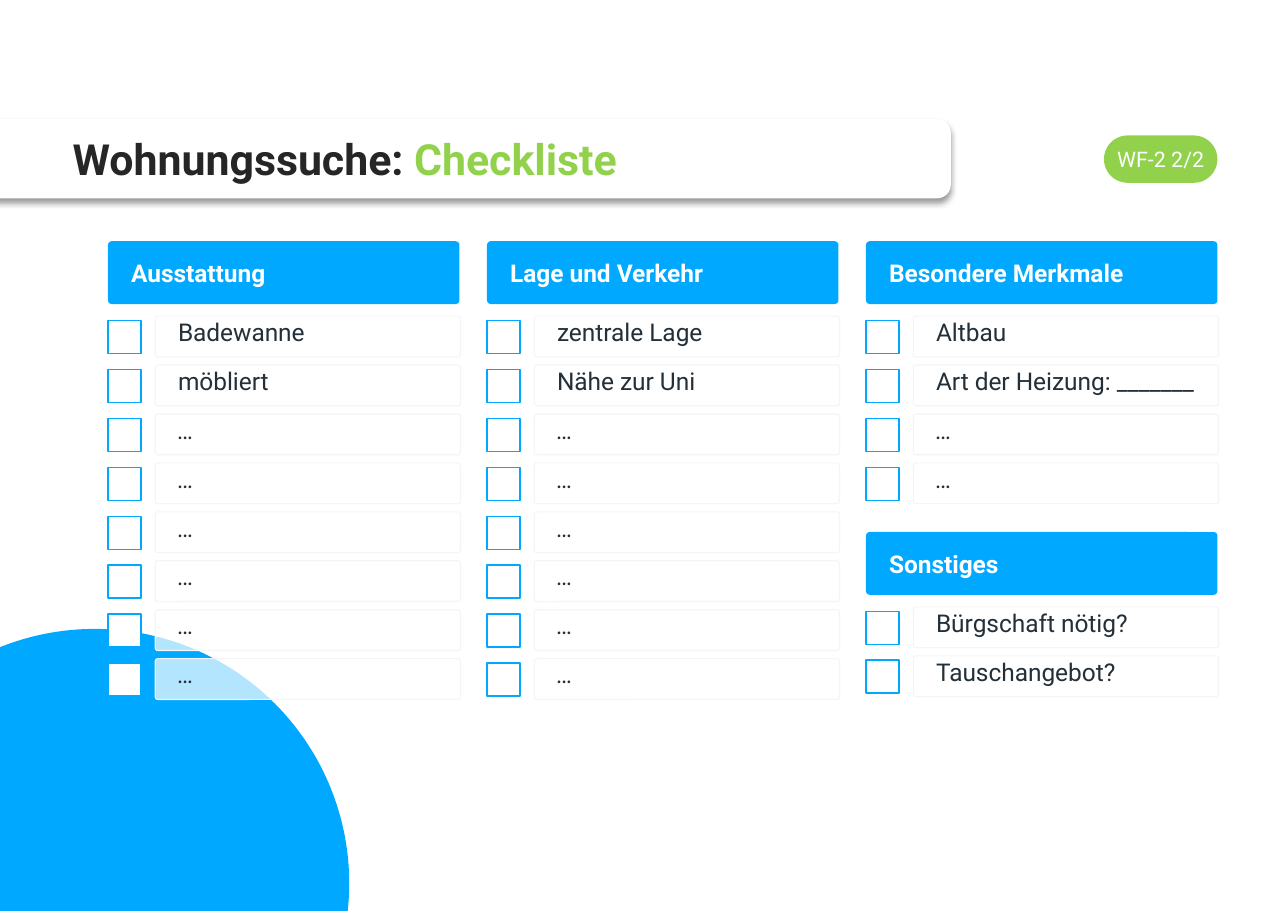
"""Build the flat-hunting checklist slide."""
from dataclasses import dataclass
from math import acos, asin, cos, pi, sin

from lxml import etree
from pptx import Presentation
from pptx.dml.color import RGBColor
from pptx.enum.shapes import MSO_SHAPE
from pptx.enum.text import MSO_ANCHOR, MSO_AUTO_SIZE, PP_ALIGN
from pptx.oxml.ns import qn
from pptx.shapes.autoshape import Shape
from pptx.slide import Slide
from pptx.util import Inches, Pt

RECT, ROUND = MSO_SHAPE.RECTANGLE, MSO_SHAPE.ROUNDED_RECTANGLE
TOP, MIDDLE = MSO_ANCHOR.TOP, MSO_ANCHOR.MIDDLE
LEFT, CENTER = PP_ALIGN.LEFT, PP_ALIGN.CENTER
BLUE = RGBColor(0x00, 0xA8, 0xFF)
GREEN = RGBColor(0x91, 0xD1, 0x4C)
WHITE = RGBColor(0xFF, 0xFF, 0xFF)
PALE = RGBColor(0xF5, 0xF5, 0xF5)
DARK = RGBColor(0x26, 0x26, 0x26)
SLATE = RGBColor(0x24, 0x30, 0x39)
BLACK = RGBColor(0x00, 0x00, 0x00)
FONT = "Roboto"
WIDE, HIGH = 11.69, 8.27
PITCH = (5.98 - 2.87) / 7
PAD = (0.2, 0, 0.12, 0)
DOTS = "…"


@dataclass(frozen=True)
class Group:
    """A headed list of things to tick."""
    left: float
    top: float
    head: str
    items: tuple[str, ...]
    blanks: int = 0


GROUPS = (
    Group(0.98, 2.19, "Ausstattung", ("Badewanne", "möbliert"), 6),
    Group(4.42, 2.19, "Lage und Verkehr", ("zentrale Lage", "Nähe zur Uni"), 6),
    Group(7.86, 2.19, "Besondere Merkmale", ("Altbau", "Art der Heizung: _______"), 2),
    Group(7.86, 4.83, "Sonstiges", ("Bürgschaft nötig?", "Tauschangebot?")),
)


def write(shape: Shape, *parts: tuple[str, RGBColor], size: float = 16,
          bold: bool = False, italic: bool = False, align: PP_ALIGN = LEFT,
          anchor: MSO_ANCHOR = MIDDLE,
          pad: tuple[float, float, float, float] = PAD) -> None:
    """Fill a shape with one paragraph of coloured runs."""
    frame = shape.text_frame
    frame.word_wrap = True
    frame.auto_size = MSO_AUTO_SIZE.NONE
    frame.vertical_anchor = anchor
    frame.margin_left, frame.margin_top, frame.margin_right, frame.margin_bottom = map(Inches, pad)
    para = frame.paragraphs[0]
    para.alignment = align
    for text, color in parts:
        run = para.add_run()
        run.text = text
        run.font.name = FONT
        run.font.size = Pt(size)
        run.font.bold = bold
        run.font.italic = italic
        run.font.color.rgb = color


def paint(shape: Shape, fill: RGBColor, line: RGBColor | None = None,
          width: float = 1) -> None:
    """Set a flat fill and an optional line."""
    shape.shadow.inherit = False
    shape.fill.solid()
    shape.fill.fore_color.rgb = fill
    if line is None:
        shape.line.fill.background()
    else:
        shape.line.color.rgb = line
        shape.line.width = Pt(width)


def block(slide: Slide, kind: MSO_SHAPE, left: float, top: float, width: float,
          height: float, fill: RGBColor, line: RGBColor | None = None,
          weight: float = 1, curve: float | None = None) -> Shape:
    """Add a painted preset shape."""
    shape = slide.shapes.add_shape(kind, *map(Inches, (left, top, width, height)))
    if curve is not None:
        shape.adjustments[0] = curve
    paint(shape, fill, line, weight)
    return shape


def fade(shape: Shape, share: int) -> None:
    """Give a solid fill an opacity in percent."""
    color = shape.element.spPr.find(qn("a:solidFill"))[0]
    etree.SubElement(color, qn("a:alpha"), val=str(share * 1000))


def shade(shape: Shape) -> None:
    """Cast a soft shadow straight down."""
    effects = shape.element.spPr.find(qn("a:effectLst"))
    outer = etree.SubElement(effects, qn("a:outerShdw"), blurRad=str(Pt(4)),
                             dist=str(Pt(3)), dir="5400000", algn="t", rotWithShape="0")
    color = etree.SubElement(outer, qn("a:srgbClr"), val=str(BLACK))
    etree.SubElement(color, qn("a:alpha"), val="40000")


def draw_disc(slide: Slide) -> None:
    """Draw the disc cut off by the slide corner."""
    mid_x, mid_y, radius, steps = 0.86, 8.02, 2.31, 120
    start = -asin((HIGH - mid_y) / radius)
    end = pi - acos(mid_x / radius)
    turns = [start + (end - start) * step / steps for step in range(steps + 1)]
    arc = [(Inches(mid_x + radius * cos(turn)), Inches(mid_y - radius * sin(turn)))
           for turn in turns]
    pen = slide.shapes.build_freeform(0, Inches(HIGH))
    pen.add_line_segments(arc, close=True)
    paint(pen.convert_to_shape(), BLUE)


def draw_title(slide: Slide) -> None:
    """Draw the title on its raised panel, and the page badge."""
    badge = block(slide, ROUND, 10.02, 1.23, 1.03, 0.43, GREEN, curve=0.5)
    write(badge, ("WF-2 2/2", WHITE), size=14, align=CENTER, pad=(0, 0.05, 0, 0.05))
    panel = block(slide, ROUND, -0.83, 1.08, 9.46, 0.72, WHITE, curve=0.17)
    shade(panel)
    title = slide.shapes.title
    title.left, title.top, title.width, title.height = map(Inches, (0.66, 1.08, 7.8, 0.72))
    write(title, ("Wohnungssuche: ", DARK), ("Checkliste", GREEN), size=28, bold=True,
          pad=(0, 0.05, 0, 0.05))
    panel.element.addnext(title.element)


def draw_group(slide: Slide, group: Group) -> None:
    """Draw a heading with its tick boxes and fields."""
    head = block(slide, ROUND, group.left, group.top, 3.19, 0.57, BLUE, curve=0.06)
    write(head, (group.head, WHITE), bold=True)
    for row, text in enumerate(group.items + (DOTS,) * group.blanks):
        top = group.top + 0.68 + row * PITCH
        block(slide, RECT, group.left, top + 0.04, 0.3, 0.3, WHITE, BLUE)
        field = block(slide, ROUND, group.left + 0.43, top, 2.77, 0.37, WHITE, PALE, 0.75, 0.06)
        fade(field, 70)
        write(field, (text, SLATE), italic=text == DOTS, anchor=TOP)


def main() -> None:
    """Build and save the slide."""
    deck = Presentation()
    deck.slide_width, deck.slide_height = Inches(WIDE), Inches(HIGH)
    slide = deck.slides.add_slide(deck.slide_layouts[5])
    draw_disc(slide)
    draw_title(slide)
    for group in GROUPS:
        draw_group(slide, group)
    deck.save("out.pptx")


if __name__ == "__main__":
    main()
